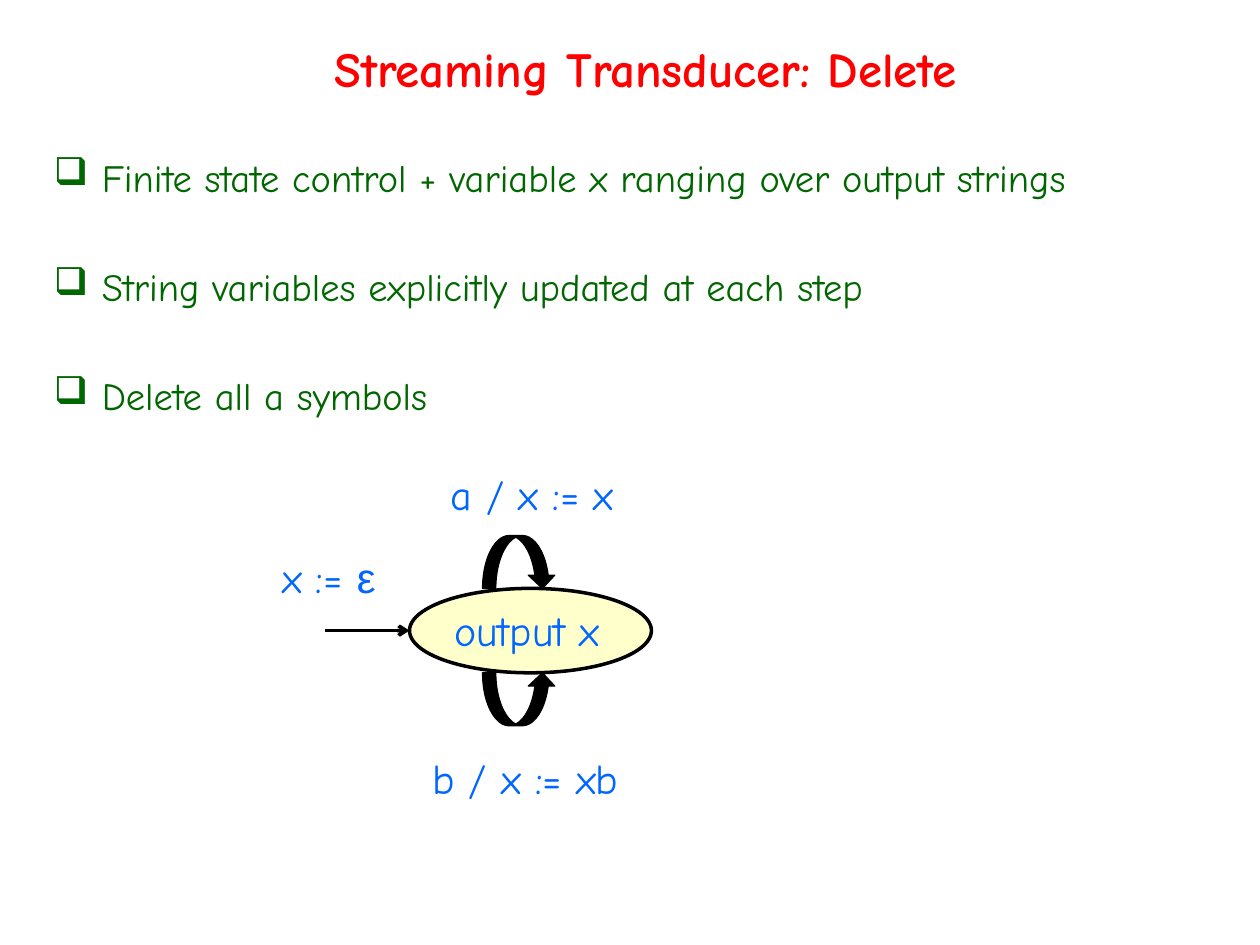
import pptx
import pptx.util
import pptx.dml.color
import pptx.enum.shapes
import pptx.enum.text
import pptx.oxml
from pptx.oxml.ns import qn

Inches, Pt = pptx.util.Inches, pptx.util.Pt
KIND = pptx.enum.shapes.MSO_SHAPE
ALIGN = pptx.enum.text.PP_ALIGN
ANCHOR = pptx.enum.text.MSO_ANCHOR

FONT = "Comic Neue"
COLORS = {"title": "FF0000", "body": "006600", "label": "0066FF",
          "state": "FFFFCC", "ink": "000000"}

TITLE = "Streaming Transducer: Delete"
POINTS = [
    "Finite state control + variable x ranging over output strings",
    "String variables explicitly updated at each step",
    "Delete all a symbols",
]
# Each label: its runs as (text, font), then left, top, width
LABELS = [
    ([("output x", FONT)], 3.42, 4.75, 1.52),
    ([("a / x := x", FONT)], 3.42, 3.67, 1.61),
    ([("x := ", FONT), ("ε", "Arial")], 2.08, 4.33, 1.06),
    ([("b / x := xb", FONT)], 3.25, 5.92, 1.84),
]
STATE = (3.25, 4.67, 1.92, 0.67)
LOOP = (0.58, 0.42)
LOOP_LEFT = 3.83
START = 2.58


def color(name):
    return pptx.dml.color.RGBColor.from_string(COLORS[name])


def style(run, size, ink, font=FONT, bold=False):
    run.font.name, run.font.size, run.font.bold = font, Pt(size), bold
    run.font.color.rgb = color(ink)


def add_box(slide, left, top, width, height, wrap=True):
    box = slide.shapes.add_textbox(*map(Inches, (left, top, width, height)))
    box.text_frame.word_wrap = wrap
    return box.text_frame


def add_figure(slide, kind, place, fill, weight):
    shape = slide.shapes.add_shape(kind, *map(Inches, place))
    shape.shadow.inherit = False
    shape.fill.solid()
    shape.fill.fore_color.rgb = color(fill)
    shape.line.color.rgb = color("ink")
    shape.line.width = Pt(weight)
    return shape


def add_bullet(para):
    props = para._p.get_or_add_pPr()
    props.set("marL", str(Inches(0.38)))
    props.set("indent", str(-Inches(0.38)))
    mark = pptx.oxml.parse_xml(
        '<a:buChar xmlns:a="http://schemas.openxmlformats.org/'
        'drawingml/2006/main" char="❑"/>')
    props.append(mark)


def add_arrow(slide, x1, x2, y):
    line = slide.shapes.add_connector(
        pptx.enum.shapes.MSO_CONNECTOR.STRAIGHT,
        *map(Inches, (x1, y, x2, y)))
    line.line.color.rgb = color("ink")
    line.line.width = Pt(2)
    tip = line.line._get_or_add_ln().makeelement(
        qn("a:tailEnd"), {"type": "arrow"})
    line.line._get_or_add_ln().append(tip)
    props = line._element.spPr
    props.append(props.makeelement(qn("a:effectLst"), {}))


def main():
    deck = pptx.Presentation()
    deck.slide_width, deck.slide_height = Inches(10), Inches(7.5)
    slide = deck.slides.add_slide(deck.slide_layouts[6])

    left, top, width, height = STATE
    add_figure(slide, KIND.OVAL, STATE, "state", 2)

    title = add_box(slide, 0.25, 0.25, 9.75, 0.58)
    title.vertical_anchor = ANCHOR.MIDDLE
    title.text = TITLE
    title.paragraphs[0].alignment = ALIGN.CENTER
    style(title.paragraphs[0].runs[0], 28, "title", bold=True)

    body = add_box(slide, 0.33, 1.17, 9.67, 5.92)
    body.text = "\n".join(POINTS)
    for i, para in enumerate(body.paragraphs):
        para.space_before = Pt(36 if i else 4.4)
        add_bullet(para)
        style(para.runs[0], 22, "body")

    for parts, x, y, wide in LABELS:
        frame = add_box(slide, x, y, wide, 0.51, wrap=False)
        frame.auto_size = pptx.enum.text.MSO_AUTO_SIZE.SHAPE_TO_FIT_TEXT
        para = frame.paragraphs[0]
        para.alignment = ALIGN.CENTER
        for text, font in parts:
            run = para.add_run()
            run.text = text
            style(run, 24, "label", font)

    add_arrow(slide, START, left, top + height / 2)

    loops = [(KIND.CURVED_UP_ARROW, top + height),
             (KIND.CURVED_DOWN_ARROW, top - LOOP[1])]
    for kind, y in loops:
        loop = add_figure(slide, kind, (LOOP_LEFT, y, *LOOP), "ink", 0.75)
        for i, value in enumerate((0.25, 0.5, 0.25)):
            loop.adjustments[i] = value

    deck.save("out.pptx")


if __name__ == "__main__":
    main()
